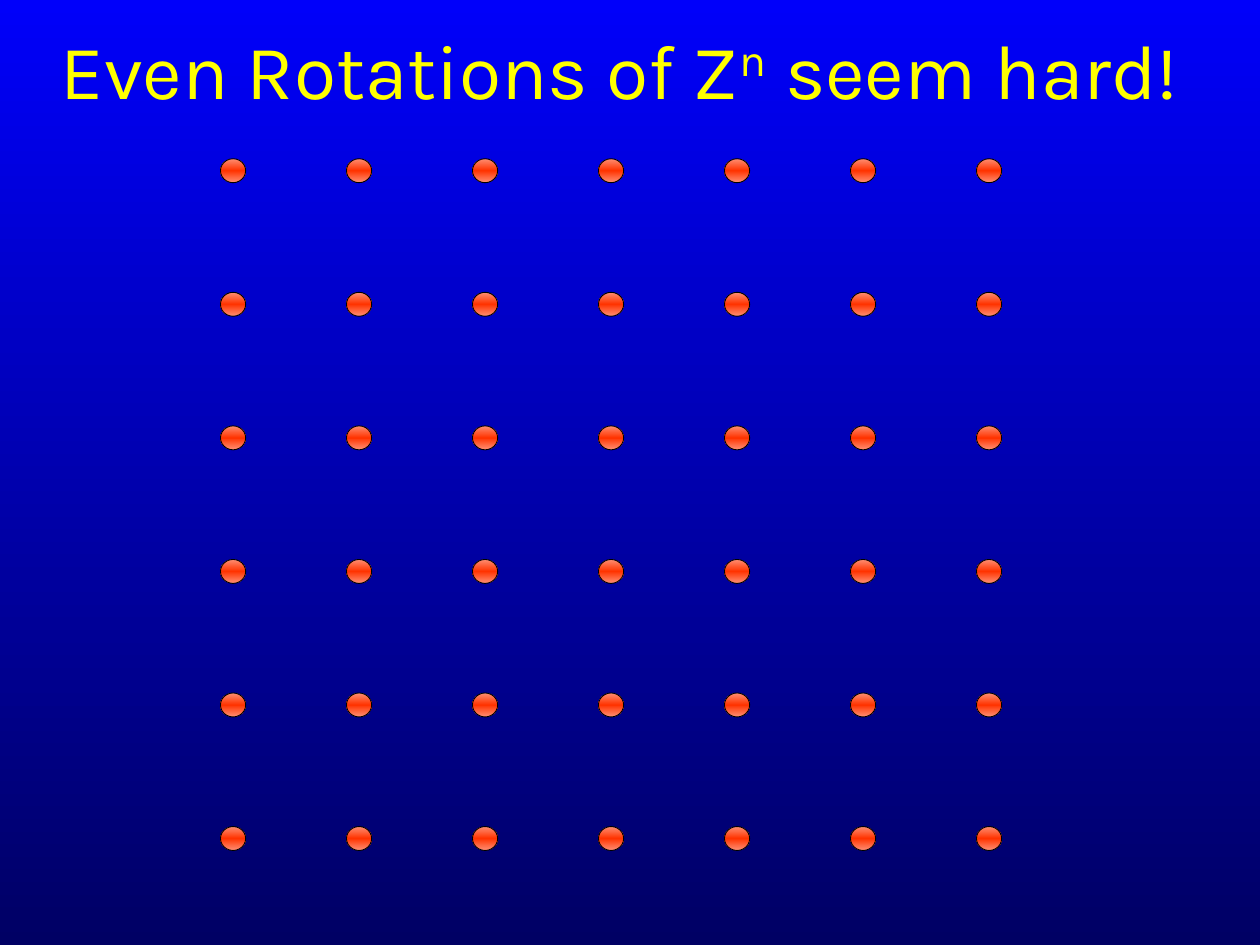
"""Build a slide with a lattice of points under a title."""
from dataclasses import dataclass
from itertools import product

from lxml.etree import SubElement
from pptx import Presentation
from pptx.dml.color import RGBColor
from pptx.dml.fill import FillFormat
from pptx.enum.shapes import MSO_SHAPE
from pptx.enum.text import MSO_ANCHOR, PP_ALIGN
from pptx.oxml.ns import qn
from pptx.oxml.xmlchemy import BaseOxmlElement
from pptx.slide import Slide
from pptx.util import Inches, Pt

NAVY = RGBColor(0x00, 0x00, 0x64)
BLUE = RGBColor(0x00, 0x00, 0xFA)
YELLOW = RGBColor(0xFF, 0xFF, 0x00)
SALMON = RGBColor(0xFE, 0x8F, 0x73)
ORANGE = RGBColor(0xFF, 0x33, 0x00)
BLACK = RGBColor(0x00, 0x00, 0x00)
FONT = "Karla"


@dataclass(frozen=True)
class Lattice:
    """Grid of equally spaced points, in inches."""

    left: float = 1.75
    top: float = 1.26
    columns: int = 7
    rows: int = 6
    column_step: float = 1.0
    row_step: float = 1.06
    point_width: float = 0.2
    point_height: float = 0.19


@dataclass(frozen=True)
class TitlePart:
    """Stretch of title text with its baseline shift in percent."""

    text: str
    baseline: int = 0


TITLE = (TitlePart("Even Rotations of Z"), TitlePart("n", 30), TitlePart(" seem hard!"))


def set_gradient(fill: FillFormat, owner: BaseOxmlElement, colors: tuple[RGBColor, ...]) -> None:
    """Fill from bottom to top with evenly spaced colours."""
    fill.gradient()
    fill.gradient_angle = 90
    stops = owner.find(".//" + qn("a:gsLst"))
    stops.clear()
    for index, color in enumerate(colors):
        position = 100000 * index // (len(colors) - 1)
        stop = SubElement(stops, qn("a:gs"), pos=str(position))
        SubElement(stop, qn("a:srgbClr"), val=str(color))


def add_title(slide: Slide, parts: tuple[TitlePart, ...]) -> None:
    """Add the centred title run by run."""
    shape = slide.shapes.add_textbox(Inches(0.17), Inches(-0.08), Inches(9.5), Inches(1.25))
    frame = shape.text_frame
    frame.word_wrap = True
    frame.vertical_anchor = MSO_ANCHOR.MIDDLE
    paragraph = frame.paragraphs[0]
    paragraph.alignment = PP_ALIGN.CENTER
    for part in parts:
        run = paragraph.add_run()
        run.text = part.text
        run.font.name = FONT
        run.font.size = Pt(44)
        run.font.color.rgb = YELLOW
        if part.baseline:
            run.font._element.set("baseline", str(part.baseline * 1000))


def add_lattice(slide: Slide, lattice: Lattice) -> None:
    """Add the grouped points row by row."""
    group = slide.shapes.add_group_shape()
    for row, column in product(range(lattice.rows), range(lattice.columns)):
        shape = group.shapes.add_shape(
            MSO_SHAPE.OVAL,
            Inches(lattice.left + column * lattice.column_step),
            Inches(lattice.top + row * lattice.row_step),
            Inches(lattice.point_width),
            Inches(lattice.point_height),
        )
        shape.shadow.inherit = False
        set_gradient(shape.fill, shape._element, (SALMON, ORANGE, SALMON))
        shape.line.color.rgb = BLACK
        shape.line.width = Pt(0.5)


def main() -> None:
    """Build and save the presentation."""
    presentation = Presentation()
    presentation.slide_width = Inches(10)
    presentation.slide_height = Inches(7.5)
    slide = presentation.slides.add_slide(presentation.slide_layouts[6])
    set_gradient(slide.background.fill, slide._element, (NAVY, BLUE))
    add_title(slide, TITLE)
    add_lattice(slide, Lattice())
    presentation.save("out.pptx")


if __name__ == "__main__":
    main()
